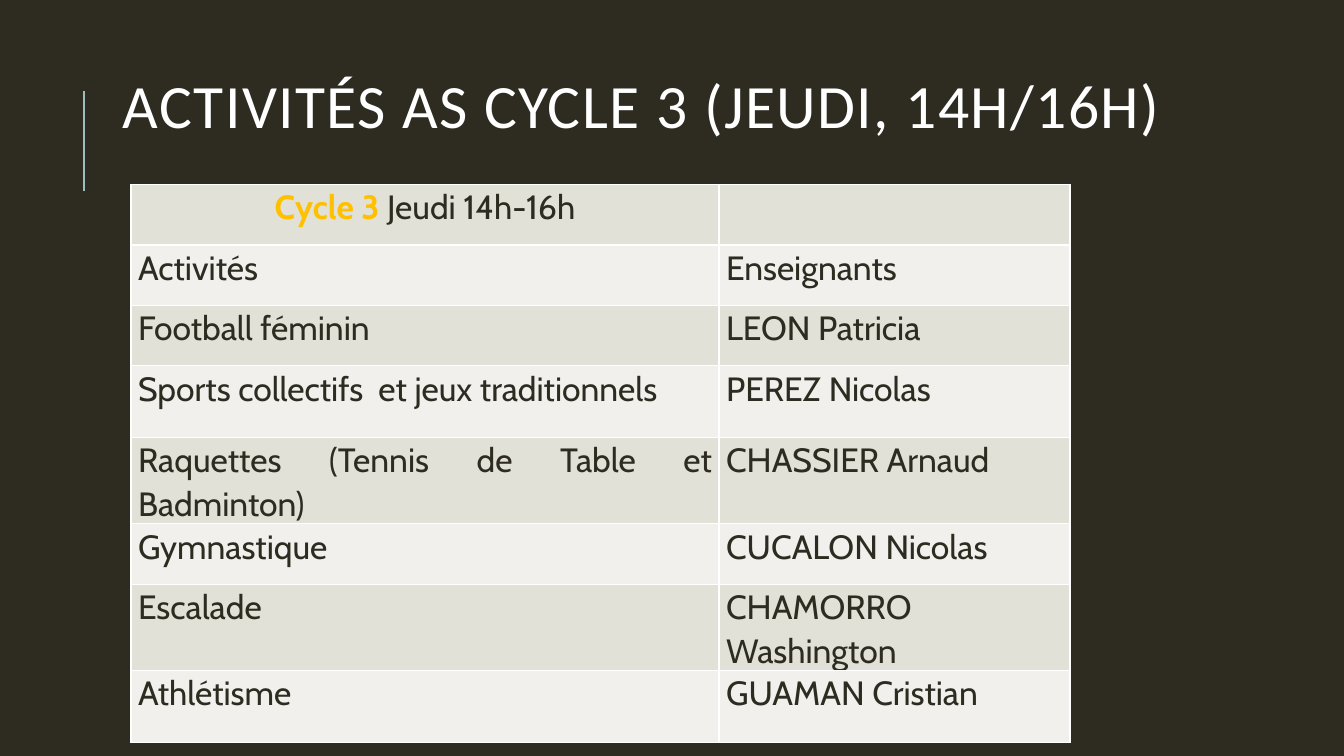
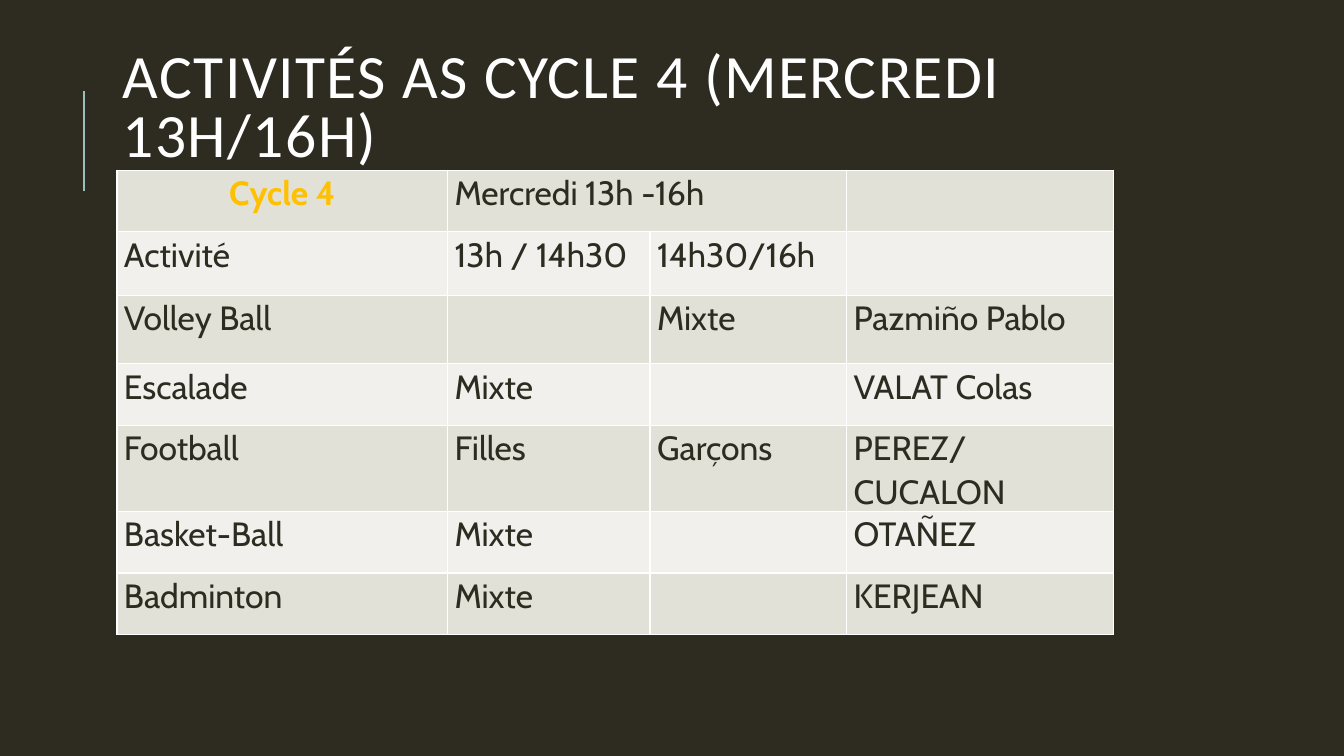
import dataclasses

import lxml.etree
import pptx
import pptx.dml.color
import pptx.enum.shapes
import pptx.enum.text
import pptx.oxml.ns
import pptx.util


@dataclasses.dataclass(frozen=True)
class Theme:
    back: str = "2E2B21"
    title: str = "FFFFFF"
    rule: str = "9CBEBD"
    text: str = "2E2B21"
    accent: str = "FFC000"
    border: str = "FFFFFF"
    bands: tuple = ("E2E1D7", "F1F0EC")
    title_font: str = "Calibri"
    body_font: str = "Cabin"
    title_size: int = 44
    body_size: int = 24
    rule_width: float = 1.5
    border_width: int = 1


def rgb(color):
    return pptx.dml.color.RGBColor.from_string(color)


def add_xml(parent, tag, **attrs):
    return lxml.etree.SubElement(parent, pptx.oxml.ns.qn(tag), **attrs)


class Deck:
    def __init__(self, theme):
        self.theme = theme
        self.prs = pptx.Presentation()
        self.prs.slide_width = pptx.util.Inches(13.33)
        self.prs.slide_height = pptx.util.Inches(7.5)
        fill = self.prs.slide_master.background.fill
        fill.solid()
        fill.fore_color.rgb = rgb(theme.back)
        self.slide = None

    def x(self, percent):
        return pptx.util.Emu(round(self.prs.slide_width * percent / 100))

    def y(self, percent):
        return pptx.util.Emu(round(self.prs.slide_height * percent / 100))

    def add_slide(self, title):
        self.slide = self.prs.slides.add_slide(self.prs.slide_layouts[6])
        self.rule(6.25, 25.33, 12)
        self.title(title)

    def rule(self, left, start, end):
        line = self.slide.shapes.add_connector(
            pptx.enum.shapes.MSO_CONNECTOR.STRAIGHT,
            self.x(left), self.y(start), self.x(left), self.y(end))
        line.line.color.rgb = rgb(self.theme.rule)
        line.line.width = pptx.util.Pt(self.theme.rule_width)
        add_xml(line._element.spPr, "a:effectLst")

    def run(self, p, text, font, size, color, bold=False):
        r = p.add_run()
        r.text = text
        r.font.name = font
        r.font.size = pptx.util.Pt(size)
        r.font.color.rgb = rgb(color)
        r.font.bold = bold
        return r

    def title(self, text):
        sp = self.slide.shapes.add_textbox(
            self.x(8.4), self.y(8.53), self.x(79.75), self.y(12.13))
        tf = sp.text_frame
        tf.word_wrap = True
        tf.vertical_anchor = pptx.enum.text.MSO_ANCHOR.MIDDLE
        p = tf.paragraphs[0]
        p.line_spacing = 0.8
        theme = self.theme
        r = self.run(p, text, theme.title_font, theme.title_size, theme.title)
        r.font._element.set("spc", "100")

    def table(self, left, top, widths, heights, rows, merges=()):
        table = self.slide.shapes.add_table(
            len(heights), len(widths), self.x(left), self.y(top),
            self.x(sum(widths)), self.y(sum(heights))).table
        table.first_row = False
        table.horz_banding = False
        for column, width in zip(table.columns, widths):
            column.width = self.x(width)
        for i, (row, height, texts) in enumerate(zip(table.rows, heights, rows)):
            row.height = self.y(height)
            band = self.theme.bands[i % len(self.theme.bands)]
            for cell, text in zip(row.cells, texts):
                self.cell(cell, text, band, heading=i == 0 and cell is not None)
        for first, last in merges:
            table.cell(*first).merge(table.cell(*last))

    def cell(self, cell, text, band, heading):
        self.borders(cell)
        cell.fill.solid()
        cell.fill.fore_color.rgb = rgb(band)
        if not text:
            return
        cell.margin_left = cell.margin_right = pptx.util.Inches(0.07)
        cell.margin_top = cell.margin_bottom = 0
        p = cell.text_frame.paragraphs[0]
        p.line_spacing = 1.07
        p.space_after = pptx.util.Pt(8)
        theme = self.theme
        accent, plain = text if isinstance(text, tuple) else ("", text)
        align = pptx.enum.text.PP_ALIGN
        p.alignment = align.CENTER if accent else align.JUSTIFY
        if accent:
            self.run(p, accent, theme.body_font, theme.body_size, theme.accent, True)
        if plain:
            self.run(p, plain, theme.body_font, theme.body_size, theme.text)

    def borders(self, cell):
        width = pptx.util.Pt(self.theme.border_width)
        props = cell._tc.get_or_add_tcPr()
        for side in ("a:lnL", "a:lnR", "a:lnT", "a:lnB"):
            line = add_xml(props, side, w=str(width))
            add_xml(add_xml(line, "a:solidFill"), "a:srgbClr", val=self.theme.border)

    def save(self):
        self.prs.save("out.pptx")


def main():
    deck = Deck(Theme())

    deck.add_slide("ACTIVITÉS AS CYCLE 3 (JEUDI, 14H/16H)")
    deck.table(
        9.75, 24.4, [43.75, 26.12], [8, 8, 8, 9.47, 8.93, 8, 9.47, 9.47],
        [
            [("Cycle 3 ", "Jeudi 14h-16h"), ""],
            ["Activités", "Enseignants"],
            ["Football féminin", "LEON Patricia"],
            ["Sports collectifs  et jeux traditionnels", "PEREZ Nicolas"],
            ["Raquettes (Tennis de Table et Badminton)", "CHASSIER Arnaud"],
            ["Gymnastique", "CUCALON Nicolas"],
            ["Escalade", "CHAMORRO Washington"],
            ["Athlétisme", "GUAMAN Cristian"],
        ])

    deck.add_slide("ACTIVITÉS AS CYCLE 4 (MERCREDI 13H/16H)")
    deck.table(
        8.7, 22.53, [24.6, 15.07, 14.63, 19.88],
        [8.13, 8.4, 9.07, 8.13, 10.27, 8.13, 8.13],
        [
            [("Cycle 4", ""), "Mercredi 13h -16h", "", ""],
            ["Activité", "13h / 14h30", "14h30/16h", ""],
            ["Volley Ball", "", "Mixte", "Pazmiño Pablo"],
            ["Escalade", "Mixte", "", "VALAT Colas"],
            ["Football", "Filles", "Garçons", "PEREZ/ CUCALON"],
            ["Basket-Ball", "Mixte", "", "OTAÑEZ"],
            ["Badminton", "Mixte", "", "KERJEAN"],
        ],
        merges=[((0, 1), (0, 2))])

    deck.save()


if __name__ == "__main__":
    main()
